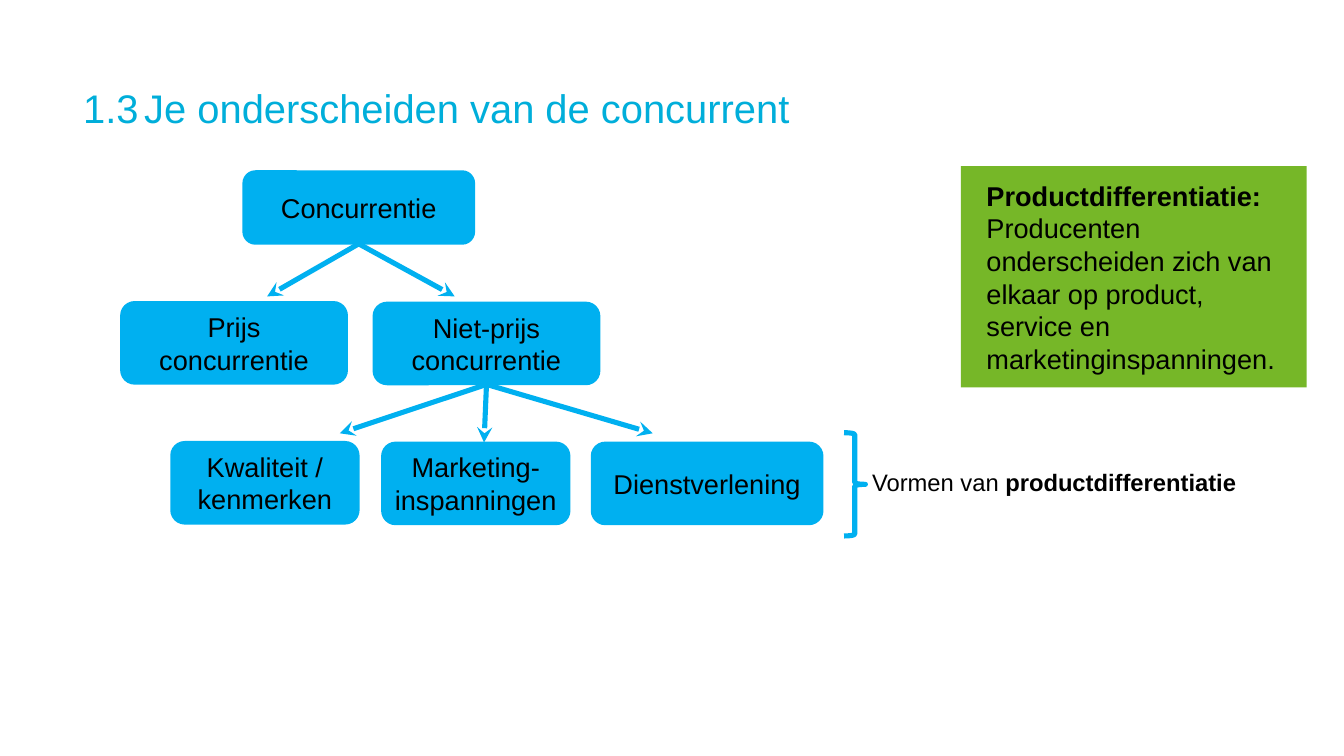
from dataclasses import dataclass

from lxml import etree
from pptx import Presentation
from pptx import util as u
from pptx.dml.color import RGBColor
from pptx.enum import shapes, text
from pptx.oxml.ns import qn

BLUE, GREEN, TITLE, BLACK = "00B0F0", "76B728", "00AEDA", "000000"
KIND = shapes.MSO_SHAPE


@dataclass
class Node:
    label: str
    left: float
    top: float
    width: float
    height: float = 1.34


@dataclass
class Arrow:
    start: Node
    x: float
    y: float


ROOT = Node("Concurrentie", 3.98, 2.8, 3.78, 1.19)
PRICE = Node("Prijs\nconcurrentie", 1.98, 4.94, 3.7)
OTHER = Node("Niet-prijs\nconcurrentie", 6.11, 4.95, 3.7)
NODES = [
    ROOT,
    PRICE,
    OTHER,
    Node("Kwaliteit / kenmerken", 2.8, 7.23, 3.07),
    Node("Marketing-\ninspanningen", 6.25, 7.24, 3.07),
    Node("Dienstverlening", 9.68, 7.24, 3.78),
]
ARROWS = [
    Arrow(ROOT, 4.37, 4.85),
    Arrow(ROOT, 7.44, 4.85),
    Arrow(OTHER, 5.56, 7.09),
    Arrow(OTHER, 7.92, 7.24),
    Arrow(OTHER, 10.68, 7.09),
]


def paint(target, color: str) -> None:
    target.rgb = RGBColor.from_string(color)


def stroke(line, width: float) -> None:
    paint(line.color, BLUE)
    line.width = u.Pt(width)


def style(frame, size: float, color: str = BLACK, align=text.PP_ALIGN.LEFT) -> None:
    for para in frame.paragraphs:
        para.alignment = align
        for run in para.runs:
            run.font.name = "Arial"
            run.font.size = u.Pt(size)
            paint(run.font.color, color)


def inset(frame, x: float, y: float) -> None:
    frame.margin_left = frame.margin_right = u.Inches(x)
    frame.margin_top = frame.margin_bottom = u.Inches(y)
    frame.word_wrap = True


def add_box(slide, kind, left: float, top: float, width: float, height: float):
    box = slide.shapes.add_shape(kind, *map(u.Inches, (left, top, width, height)))
    box.shadow.inherit = False
    return box


def add_text(slide, left: float, top: float, width: float, height: float):
    return slide.shapes.add_textbox(*map(u.Inches, (left, top, width, height))).text_frame


def add_title(slide) -> None:
    frame = add_text(slide, 1.36, 1.36, 19.25, 0.91)
    inset(frame, 0, 0)
    frame.text = "1.3\tJe onderscheiden van de concurrent"
    style(frame, 47, TITLE)
    tabs = etree.SubElement(frame.paragraphs[0]._p.get_or_add_pPr(), qn("a:tabLst"))
    etree.SubElement(tabs, qn("a:tab"), pos=str(u.Inches(1)), algn="l")


def add_node(slide, node: Node) -> None:
    box = add_box(slide, KIND.ROUNDED_RECTANGLE, node.left, node.top, node.width, node.height)
    box.fill.solid()
    paint(box.fill.fore_color, BLUE)
    stroke(box.line, 2)
    frame = box.text_frame
    inset(frame, 0.1, 0.05)
    frame.vertical_anchor = text.MSO_ANCHOR.MIDDLE
    frame.text = node.label
    style(frame, 32, align=text.PP_ALIGN.CENTER)


def add_arrow(slide, arrow: Arrow) -> None:
    node = arrow.start
    ends = (node.left + node.width / 2, node.top + node.height, arrow.x, arrow.y)
    line = slide.shapes.add_connector(shapes.MSO_CONNECTOR.STRAIGHT, *map(u.Inches, ends))
    stroke(line.line, 6)
    etree.SubElement(line.line._get_or_add_ln(), qn("a:tailEnd"), type="stealth")
    etree.SubElement(line._element.spPr, qn("a:effectLst"))


def add_panel(slide) -> None:
    box = add_box(slide, KIND.RECTANGLE, 15.72, 2.72, 5.66, 3.62)
    box.fill.solid()
    paint(box.fill.fore_color, GREEN)
    box.line.fill.background()
    frame = box.text_frame
    inset(frame, 0.42, 0.42)
    frame.vertical_anchor = text.MSO_ANCHOR.MIDDLE
    frame.text = (
        "Productdifferentiatie:\n"
        "Producenten onderscheiden zich van elkaar op product, "
        "service en marketinginspanningen."
    )
    style(frame, 32)
    frame.paragraphs[0].runs[0].font.bold = True


def add_forms(slide) -> None:
    brace = add_box(slide, KIND.RIGHT_BRACE, 13.81, 7.08, 0.35, 1.69)
    brace.fill.background()
    stroke(brace.line, 6)
    frame = add_text(slide, 14.17, 7.6, 6.3, 0.57)
    inset(frame, 0.1, 0.05)
    frame.text = "Vormen van "
    term = frame.paragraphs[0].add_run()
    term.text = "productdifferentiatie"
    term.font.bold = True
    style(frame, 28)


def main() -> None:
    deck = Presentation()
    deck.slide_width, deck.slide_height = u.Inches(21.99), u.Inches(12.37)
    slide = deck.slides.add_slide(deck.slide_layouts[6])
    add_title(slide)
    for arrow in ARROWS:
        add_arrow(slide, arrow)
    for node in NODES:
        add_node(slide, node)
    add_panel(slide)
    add_forms(slide)
    deck.save("out.pptx")


if __name__ == "__main__":
    main()
